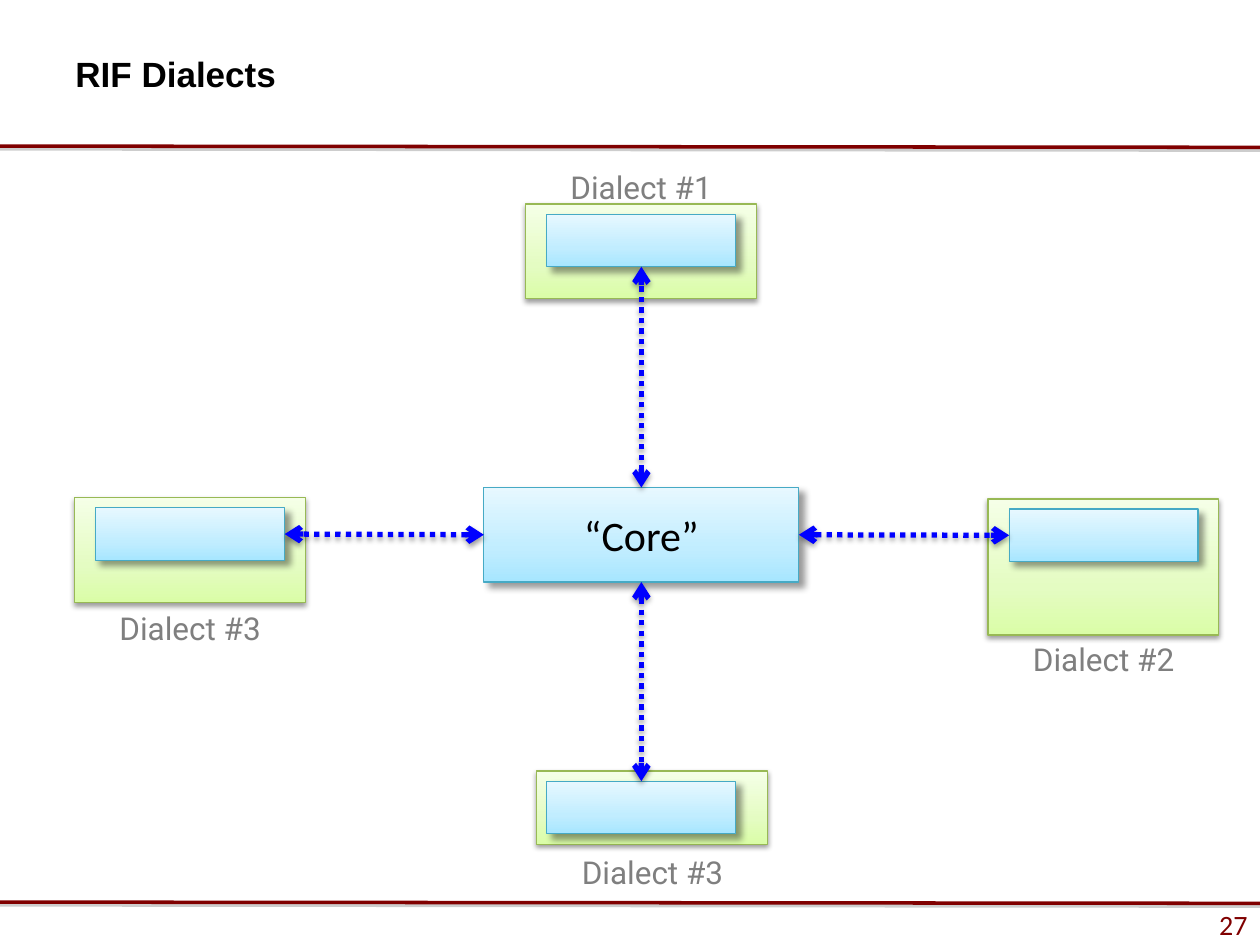
import dataclasses
import typing

import pptx
import pptx.dml.color
import pptx.enum.dml
import pptx.enum.shapes
import pptx.enum.text
import pptx.oxml
import pptx.oxml.ns
import pptx.util

COLOURS = {
    "paper": "FFFFFF", "ink": "000000", "label": "7F7F7F", "arrow": "0000FF",
    "rule": "800000", "rule_shadow": "808080",
    "core_line": "46AAC5", "dialect_line": "98B955",
}
CORE_STOPS = ((0, "A7E6FF"), (35, "C1EDFF"), (100, "E7F8FF"))
DIALECT_STOPS = ((0, "DAFDA7"), (35, "E4FCC2"), (100, "F5FFE7"))
ALIGN = pptx.enum.text.PP_ALIGN
Point = tuple[float, float]


@dataclasses.dataclass(frozen=True)
class Area:
    left: float
    top: float
    width: float
    height: float

    def lengths(self) -> list[pptx.util.Length]:
        return [pptx.util.Pt(value) for value in dataclasses.astuple(self)]


@dataclasses.dataclass(frozen=True)
class Shadow:
    colour: str
    alpha: int
    blur: float
    distance: float
    angle: int


@dataclasses.dataclass(frozen=True)
class Style:
    stops: tuple
    line: str
    shadow: Shadow


@dataclasses.dataclass(frozen=True)
class Dialect:
    label: str
    area: Area
    core_left: float
    label_top: float
    core_end: Point

    @property
    def core(self) -> Area:
        return Area(self.core_left, self.area.top + 5.8, 108, 30)


SOFT = Shadow(COLOURS["ink"], 38, 3.1, 1.6, 90)
RULE_SHADOW = Shadow(COLOURS["rule_shadow"], 38, 0, 1.6, 90)
CORE_STYLE = Style(CORE_STOPS, COLOURS["core_line"], Shadow(COLOURS["ink"], 40, 4, 4, 45))
DIALECT_STYLE = Style(DIALECT_STOPS, COLOURS["dialect_line"], SOFT)

CORE = Area(276.5, 278.6, 180, 54)
MIDDLE_X = CORE.left + CORE.width / 2
MIDDLE_Y = CORE.top + CORE.height / 2
DIALECTS = [
    Dialect("Dialect #3", Area(306.7, 440.6, 132, 41.8), 312.5, 483.8,
            (MIDDLE_X, CORE.top + CORE.height)),
    Dialect("Dialect #2", Area(564.5, 285.1, 132, 77.8), 576.7, 362.2,
            (CORE.left + CORE.width, MIDDLE_Y)),
    Dialect("Dialect #1", Area(300.2, 116.6, 132, 54), 312.5, 92.2,
            (MIDDLE_X, CORE.top)),
    Dialect("Dialect #3", Area(42.5, 284.4, 132, 59.8), 54.7, 290.2 + 54,
            (CORE.left, MIDDLE_Y)),
]


def rgb(colour: str) -> pptx.dml.color.RGBColor:
    return pptx.dml.color.RGBColor.from_string(colour)


def element(markup: str) -> typing.Any:
    tag, rest = markup.split(" ", 1)
    return pptx.oxml.parse_xml(f"{tag} {pptx.oxml.ns.nsdecls('a')} {rest}")


def add_shadow(properties: typing.Any, shadow: Shadow) -> None:
    """Put the shadow last among the fill, line and effect settings."""
    for old in properties.findall(pptx.oxml.ns.qn("a:effectLst")):
        properties.remove(old)
    properties.append(element(
        f'<a:effectLst ><a:outerShdw blurRad="{pptx.util.Pt(shadow.blur)}" '
        f'dist="{pptx.util.Pt(shadow.distance)}" dir="{shadow.angle * 60000}" '
        f'rotWithShape="0"><a:srgbClr val="{shadow.colour}">'
        f'<a:alpha val="{shadow.alpha * 1000}"/></a:srgbClr></a:outerShdw></a:effectLst>'))


def write(shape: typing.Any, text: str, size: float, font: str, colour: str,
          align: typing.Any, middle: bool = True, bold: bool = False) -> None:
    frame = shape.text_frame
    frame.text = text
    frame.word_wrap = True
    anchor = pptx.enum.text.MSO_ANCHOR
    frame.vertical_anchor = anchor.MIDDLE if middle else anchor.TOP
    para = frame.paragraphs[0]
    para.alignment = align
    span = para.runs[0]
    span.font.size = pptx.util.Pt(size)
    span.font.name = font
    span.font.bold = bold
    span.font.color.rgb = rgb(colour)


def add_box(page: typing.Any, area: Area, style: Style) -> typing.Any:
    box = page.shapes.add_shape(pptx.enum.shapes.MSO_SHAPE.RECTANGLE, *area.lengths())
    box.fill.gradient()
    box.fill.gradient_angle = 90
    properties = box._element.spPr
    stop_list = properties.find(".//" + pptx.oxml.ns.qn("a:gsLst"))
    for old in list(stop_list):
        stop_list.remove(old)
    for place, colour in style.stops:
        stop_list.append(element(
            f'<a:gs pos="{place * 1000}"><a:srgbClr val="{colour}"/></a:gs>'))
    box.line.color.rgb = rgb(style.line)
    box.line.width = pptx.util.Pt(0.75)
    add_shadow(properties, style.shadow)
    return box


def add_line(page: typing.Any, start: Point, end: Point, colour: str,
             width: float, shadow: Shadow) -> typing.Any:
    line = page.shapes.add_connector(
        pptx.enum.shapes.MSO_CONNECTOR.STRAIGHT,
        *[pptx.util.Pt(value) for value in (*start, *end)])
    line.line.color.rgb = rgb(colour)
    line.line.width = pptx.util.Pt(width)
    add_shadow(line._element.spPr, shadow)
    return line


def add_arrow(page: typing.Any, start: Point, end: Point) -> None:
    arrow = add_line(page, start, end, COLOURS["arrow"], 3, SOFT)
    arrow.line.dash_style = pptx.enum.dml.MSO_LINE.ROUND_DOT
    outline = arrow._element.spPr.find(pptx.oxml.ns.qn("a:ln"))
    for tag in ("headEnd", "tailEnd"):
        outline.append(element(f'<a:{tag} type="arrow"/>'))


def arrow_target(dialect: Dialect) -> Point:
    """Find the point of the inner box that faces the core."""
    core = dialect.core
    x, y = dialect.core_end
    if x == MIDDLE_X:
        return x, core.top + (core.height if core.top < y else 0)
    return core.left + (core.width if core.left < x else 0), core.top + core.height / 2


def main() -> None:
    deck = pptx.Presentation()
    deck.slide_width, deck.slide_height = pptx.util.Pt(720), pptx.util.Pt(540)
    page = deck.slides.add_slide(deck.slide_layouts[6])
    page.background.fill.solid()
    page.background.fill.fore_color.rgb = rgb(COLOURS["paper"])

    # Page number, rules and title
    number = page.shapes.add_shape(
        pptx.enum.shapes.MSO_SHAPE.RECTANGLE, *Area(0, 519, 720, 18).lengths())
    number.shadow.inherit = False
    number.fill.solid()
    number.fill.fore_color.rgb = rgb(COLOURS["paper"])
    number.line.fill.background()
    write(number, "27", 16, "Calibri", COLOURS["rule"], ALIGN.RIGHT)
    for top in (83.5, 515.5):
        add_line(page, (0, top), (720, top + 0.7), COLOURS["rule"], 2, RULE_SHADOW)
    title = page.shapes.add_textbox(*Area(36, 24, 456, 36).lengths())
    write(title, "RIF Dialects", 20, "Arial", COLOURS["ink"], ALIGN.LEFT, bold=True)

    # Shared core
    core_box = add_box(page, CORE, CORE_STYLE)
    write(core_box, "“Core”", 24, "Calibri", COLOURS["ink"], ALIGN.CENTER)

    # Dialects, each holding the core and linked to it
    for dialect in DIALECTS:
        add_box(page, dialect.area, DIALECT_STYLE)
        add_box(page, dialect.core, CORE_STYLE)
        label = page.shapes.add_textbox(
            *Area(dialect.area.left + 6.2, dialect.label_top, 120, 27.4).lengths())
        write(label, dialect.label, 18, "Roboto", COLOURS["label"], ALIGN.CENTER, middle=False)
        add_arrow(page, dialect.core_end, arrow_target(dialect))

    deck.save("out.pptx")


if __name__ == "__main__":
    main()
